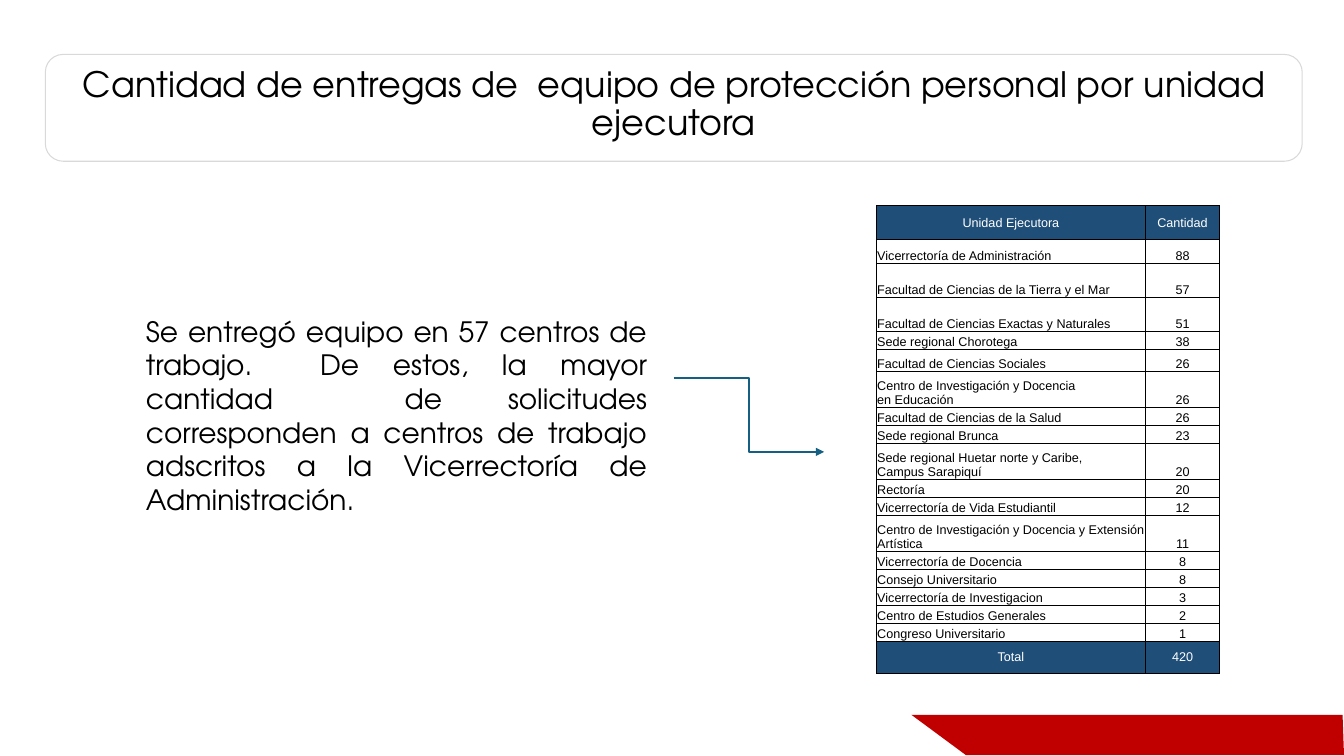
"""Build the slide on protective equipment deliveries per executing unit."""
from dataclasses import dataclass

from lxml import etree
from pptx import Presentation
from pptx.dml.color import RGBColor
from pptx.enum.shapes import MSO_CONNECTOR, MSO_SHAPE
from pptx.enum.text import MSO_ANCHOR, PP_ALIGN
from pptx.oxml.ns import qn
from pptx.util import Pt

COLORS = {"black": "000000", "white": "FFFFFF", "navy": "1F4E78",
          "red": "C00000", "gray": "D9D9D9", "teal": "156082"}
HEADING_FONT = "TeX Gyre Adventor"
TABLE_FONT = "Arial"
ONE_LINE, TWO_LINES = 12.86, 25.71


@dataclass
class UnitRow:
    unit: str
    amount: str
    height: float = ONE_LINE
    banner: bool = False


ROWS = [
    UnitRow("Unidad Ejecutora", "Cantidad", 24.3, True),
    UnitRow("Vicerrectoría de Administración", "88", 17),
    UnitRow("Facultad de Ciencias de la Tierra y el Mar", "57", 24.3),
    UnitRow("Facultad de Ciencias Exactas y Naturales", "51", 24.3),
    UnitRow("Sede regional Chorotega", "38"),
    UnitRow("Facultad de Ciencias Sociales", "26", 15.8),
    UnitRow("Centro de Investigación y Docencia\nen Educación", "26", TWO_LINES),
    UnitRow("Facultad de Ciencias de la Salud", "26"),
    UnitRow("Sede regional Brunca", "23"),
    UnitRow("Sede regional Huetar norte y Caribe,\nCampus Sarapiquí", "20", TWO_LINES),
    UnitRow("Rectoría", "20"),
    UnitRow("Vicerrectoría de Vida Estudiantil", "12"),
    UnitRow("Centro de Investigación y Docencia y Extensión Artística", "11", TWO_LINES),
    UnitRow("Vicerrectoría de Docencia", "8"),
    UnitRow("Consejo Universitario", "8"),
    UnitRow("Vicerrectoría de Investigacion", "3"),
    UnitRow("Centro de Estudios Generales", "2"),
    UnitRow("Congreso Universitario", "1"),
    UnitRow("Total", "420", 22.8, True),
]


def rgb(name: str) -> RGBColor:
    return RGBColor.from_string(COLORS[name])


def write(tf, text: str, size: float, font: str, color: str, align) -> None:
    tf.word_wrap = True
    p = tf.paragraphs[0]
    p.text = text
    p.alignment = align
    for r in p.runs:
        r.font.size = Pt(size)
        r.font.name = font
        r.font.color.rgb = rgb(color)


def add_corner(s) -> None:
    builder = s.shapes.build_freeform(Pt(959), Pt(510.6), scale=1.0)
    points = [(651, 510.6), (690, 539.4), (960, 539.4)]
    builder.add_line_segments([(Pt(x), Pt(y)) for x, y in points], close=True)
    sp = builder.convert_to_shape()
    sp.shadow.inherit = False
    sp.fill.solid()
    sp.fill.fore_color.rgb = rgb("red")
    sp.line.fill.background()


def add_title(s, text: str) -> None:
    sp = s.shapes.add_shape(MSO_SHAPE.ROUNDED_RECTANGLE,
                            Pt(32.4), Pt(38.9), Pt(897.8), Pt(76.3))
    sp.shadow.inherit = False
    sp.fill.background()
    sp.line.color.rgb = rgb("gray")
    sp.line.width = Pt(0.75)
    tf = sp.text_frame
    tf.margin_left = tf.margin_right = tf.margin_top = tf.margin_bottom = Pt(9.4)
    tf.vertical_anchor = MSO_ANCHOR.BOTTOM
    write(tf, text, 25, HEADING_FONT, "black", PP_ALIGN.CENTER)
    tf.paragraphs[0].line_spacing = 0.9


def add_arrow(s) -> None:
    cxn = s.shapes.add_connector(MSO_CONNECTOR.ELBOW,
                                 Pt(481.2), Pt(270), Pt(588.7), Pt(322.8))
    cxn.line.color.rgb = rgb("teal")
    cxn.line.width = Pt(1.5)
    etree.SubElement(cxn.line._get_or_add_ln(), qn("a:tailEnd"), type="triangle")
    etree.SubElement(cxn._element.spPr, qn("a:effectLst"))


def add_borders(cell) -> None:
    tc_pr = cell._tc.get_or_add_tcPr()
    for side in ("lnL", "lnR", "lnT", "lnB"):
        ln = etree.SubElement(tc_pr, qn(f"a:{side}"), w=str(Pt(0.5)))
        fill = etree.SubElement(ln, qn("a:solidFill"))
        etree.SubElement(fill, qn("a:srgbClr"), val=COLORS["black"])


def fill_cell(cell, text: str, banner: bool, align) -> None:
    cell.margin_left = cell.margin_right = cell.margin_top = Pt(0.6)
    cell.margin_bottom = Pt(0)
    cell.vertical_anchor = MSO_ANCHOR.MIDDLE if banner else MSO_ANCHOR.BOTTOM
    add_borders(cell)
    cell.fill.solid()
    cell.fill.fore_color.rgb = rgb("navy" if banner else "white")
    write(cell.text_frame, text, 9, TABLE_FONT, "white" if banner else "black", align)


def add_unit_table(s, rows: list[UnitRow]) -> None:
    widths = (192.2, 53)
    frame = s.shapes.add_table(len(rows), len(widths), Pt(626), Pt(146.8),
                               Pt(sum(widths)), Pt(sum(row.height for row in rows)))
    table = frame.table
    table.first_row = table.horz_banding = False
    for column, width in zip(table.columns, widths):
        column.width = Pt(width)
    for i, row in enumerate(rows):
        table.rows[i].height = Pt(row.height)
        unit_align = PP_ALIGN.CENTER if row.banner else PP_ALIGN.LEFT
        fill_cell(table.cell(i, 0), row.unit, row.banner, unit_align)
        fill_cell(table.cell(i, 1), row.amount, row.banner, PP_ALIGN.CENTER)


def main() -> None:
    prs = Presentation()
    prs.slide_width, prs.slide_height = Pt(960), Pt(540)
    s = prs.slides.add_slide(prs.slide_layouts[6])
    add_corner(s)
    summary = s.shapes.add_textbox(Pt(97.2), Pt(221), Pt(372.2), Pt(152.6))
    write(summary.text_frame,
          "Se entregó equipo en 57 centros de trabajo.  De estos, la mayor cantidad  de "
          "solicitudes corresponden a centros de trabajo adscritos a la Vicerrectoría de "
          "Administración.", 20, HEADING_FONT, "black", PP_ALIGN.JUSTIFY)
    add_title(s, "Cantidad de entregas de  equipo de protección personal por unidad ejecutora")
    add_arrow(s)
    add_unit_table(s, ROWS)
    prs.save("out.pptx")


if __name__ == "__main__":
    main()
